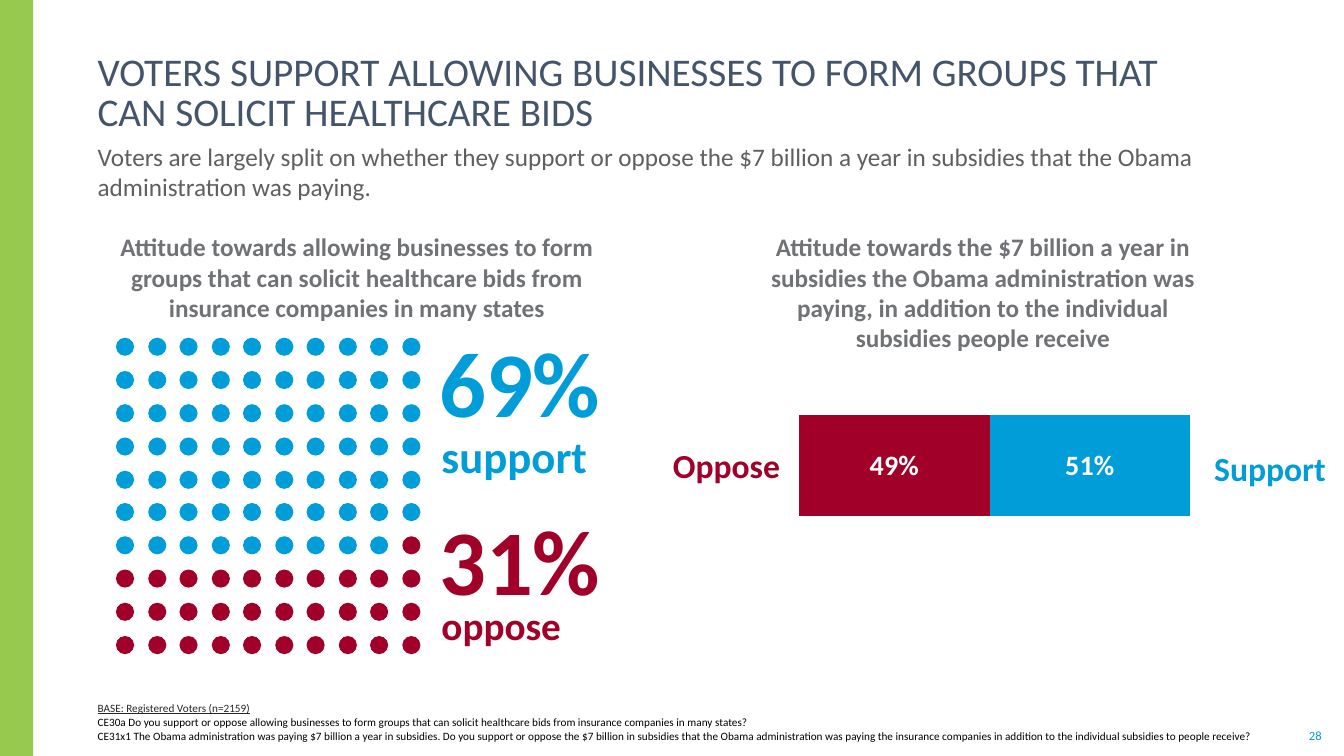
from lxml import etree
from pptx import Presentation
from pptx import util as u
from pptx.chart.data import CategoryChartData
from pptx.dml.color import RGBColor
from pptx.enum import chart as charts, shapes, text
from pptx.oxml.ns import qn

PX = 9144
GREEN = RGBColor(0x96, 0xC9, 0x4D)
BLUE = RGBColor(0x00, 0x9D, 0xD9)
RED = RGBColor(0xA1, 0x00, 0x28)
SLATE = RGBColor(0x44, 0x54, 0x6A)
GRAY = RGBColor(0x5F, 0x5F, 0x5F)
HEADING_GRAY = RGBColor(0x70, 0x72, 0x76)
CHARCOAL = RGBColor(0x26, 0x26, 0x26)
BLACK = RGBColor(0x00, 0x00, 0x00)
WHITE = RGBColor(0xFF, 0xFF, 0xFF)

LEFT, CENTER, RIGHT = text.PP_ALIGN.LEFT, text.PP_ALIGN.CENTER, text.PP_ALIGN.RIGHT
TOP, MIDDLE, BOTTOM = text.MSO_ANCHOR.TOP, text.MSO_ANCHOR.MIDDLE, text.MSO_ANCHOR.BOTTOM
RECT = shapes.MSO_SHAPE.RECTANGLE
OVAL = shapes.MSO_SHAPE.OVAL
ROUNDED = shapes.MSO_SHAPE.ROUNDED_RECTANGLE


def px(*lengths):
    return [u.Emu(length * PX) for length in lengths]


class SlideBuilder:
    font_name = "Calibri"

    def __init__(self, slide):
        self.slide = slide

    def style(self, font, size, color, bold=False):
        font.name = self.font_name
        font.size = u.Pt(size)
        font.bold = bold
        font.color.rgb = color

    def shape(self, kind, box, fill=None, parent=None):
        shape = (parent or self.slide).shapes.add_shape(kind, *px(*box))
        shape.shadow.inherit = False
        shape.line.fill.background()
        if fill is None:
            shape.fill.background()
        else:
            shape.fill.solid()
            shape.fill.fore_color.rgb = fill
        return shape

    def put_lines(self, shape, lines, size, color, bold=False, align=LEFT, anchor=TOP,
                  insets=(10, 5, 10, 5), wrap=True):
        frame = shape.text_frame
        frame.word_wrap = wrap
        frame.vertical_anchor = anchor
        (frame.margin_left, frame.margin_top,
         frame.margin_right, frame.margin_bottom) = px(*insets)
        for index, line in enumerate(lines):
            paragraph = frame.paragraphs[0] if index == 0 else frame.add_paragraph()
            paragraph.text = line
            paragraph.alignment = align
            self.style(paragraph.font, size, color, bold)
        return frame.paragraphs

    def text(self, box, lines, size, color, **options):
        textbox = self.slide.shapes.add_textbox(*px(*box))
        return self.put_lines(textbox, lines, size, color, **options)

    def side_label(self, box, label, color, **options):
        self.put_lines(self.shape(ROUNDED, box), [label], 24, color, bold=True,
                       anchor=MIDDLE, **options)

    def dot_grid(self, left, top, width, height, dot, blue_count):
        grid = self.slide.shapes.add_group_shape()
        for index in range(100):
            row, column = divmod(index, 10)
            box = (left + round(column * width / 9), top + round(row * height / 9), dot, dot)
            self.shape(OVAL, box, BLUE if index < blue_count else RED, grid)

    def split_bar(self, box, shares):
        data = CategoryChartData(number_format="0%")
        data.categories = ["1"]
        for name, value, _ in shares:
            data.add_series(name, [value])
        chart = self.slide.shapes.add_chart(
            charts.XL_CHART_TYPE.BAR_STACKED_100, *px(*box), data).chart
        chart.has_legend = False
        chart.has_title = False
        self.style(chart.font, 10, GRAY)
        chart.category_axis.visible = False
        chart.value_axis.visible = False
        chart.value_axis.has_major_gridlines = False
        chart.value_axis.minimum_scale = 0
        chart.value_axis.maximum_scale = 1
        plot = chart.plots[0]
        plot.gap_width = 57
        plot.overlap = 100
        plot.vary_by_categories = False
        for series, (_, _, color) in zip(plot.series, shares):
            series.format.fill.solid()
            series.format.fill.fore_color.rgb = color
            labels = series.data_labels
            labels.show_value = True
            labels.number_format = "0%"
            labels.number_format_is_linked = False
            labels.position = charts.XL_LABEL_POSITION.CENTER
            self.style(labels.font, 20, WHITE, True)
        self.place_plot(chart, x=0.02, y=0.09, w=0.96, h=0.86)

    def place_plot(self, chart, **fractions):
        area = chart.element.find(".//" + qn("c:plotArea"))
        for old in area.findall(qn("c:layout")):
            area.remove(old)
        layout = etree.Element(qn("c:layout"))
        area.insert(0, layout)
        manual = etree.SubElement(layout, qn("c:manualLayout"))
        settings = {"layoutTarget": "inner", "xMode": "edge", "yMode": "edge", **fractions}
        for tag, value in settings.items():
            etree.SubElement(manual, qn("c:" + tag)).set("val", str(value))


def main():
    deck = Presentation()
    deck.slide_width, deck.slide_height = px(1333, 750)
    page = SlideBuilder(deck.slides.add_slide(deck.slide_layouts[6]))
    flat = (10, 0, 10, 0)

    page.text((1297, 722, 15, 15), ["28"], 9, BLUE, align=CENTER, anchor=MIDDLE,
              insets=(0, 0, 0, 0), wrap=False)
    page.shape(RECT, (0, 0, 33, 750), GREEN)

    title = page.text(
        (87, 85, 1155, 48),
        ["VOTERS SUPPORT ALLOWING BUSINESSES TO FORM GROUPS THAT \vCAN SOLICIT HEALTHCARE BIDS"],
        28, SLATE, anchor=BOTTOM, insets=flat)
    title[0].line_spacing = 0.85
    page.text(
        (87, 140, 1190, 34),
        ["Voters are largely split on whether they support or oppose the $7 billion a year in "
         "subsidies that the Obama administration was paying."],
        18, GRAY, insets=flat)

    footnotes = page.text(
        (87, 697, 1191, 40),
        ["BASE: Registered Voters (n=2159)",
         "CE30a Do you support or oppose allowing businesses to form groups that can solicit "
         "healthcare bids from insurance companies in many states?",
         "CE31x1 The Obama administration was paying $7 billion a year in subsidies. Do you "
         "support or oppose the $7 billion in subsidies that the Obama administration was paying "
         "the insurance companies in addition to the individual subsidies to people receive?"],
        8, BLACK, anchor=BOTTOM, insets=flat)
    footnotes[0].font.color.rgb = CHARCOAL
    footnotes[0].font.underline = True
    for question in footnotes[1:]:
        question.space_before = u.Pt(0.6)

    page.dot_grid(115, 335, 284, 296, 18, blue_count=69)
    for box, words, size, color in (
        ((426, 318, 192, 151), "69%", 66, BLUE),
        ((428, 420, 259, 64), "support", 32, BLUE),
        ((426, 494, 192, 121), "31%", 66, RED),
        ((428, 592, 305, 57), "oppose", 28, RED),
    ):
        page.text(box, [words], size, color, bold=True)

    page.text(
        (83, 225, 542, 101),
        ["Attitude towards allowing businesses to form groups that can solicit healthcare bids "
         "from insurance companies in many states"],
        18, HEADING_GRAY, bold=True, align=CENTER)

    page.split_bar((784, 367, 404, 183), [("Series 1", 0.49, RED), ("Series 2", 0.51, BLUE)])
    page.side_label((1189, 409, 144, 111), "Support", BLUE, insets=(10, 5, 0, 5))
    page.side_label((608, 406, 181, 111), "Oppose", RED, align=RIGHT)
    page.text(
        (735, 225, 480, 131),
        ["Attitude towards the $7 billion a year in subsidies the Obama administration was "
         "paying, in addition to the individual subsidies people receive"],
        18, HEADING_GRAY, bold=True, align=CENTER)

    deck.save("out.pptx")


if __name__ == "__main__":
    main()
